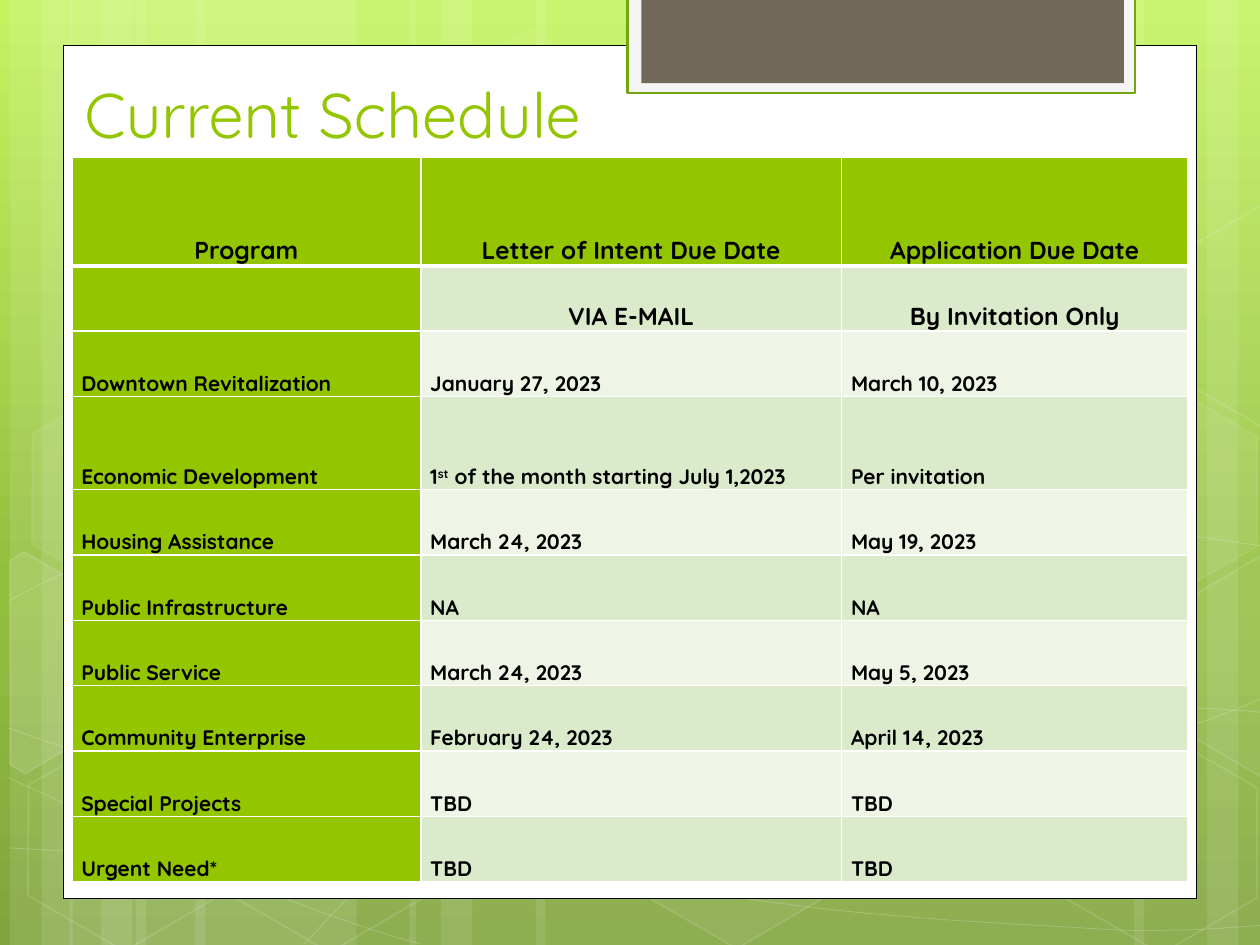
"""Build the Current Schedule slide: a table of program due dates on a green backdrop."""
import copy

import lxml.etree
import pptx
import pptx.dml.color
import pptx.enum.shapes
import pptx.enum.text
import pptx.oxml.ns
import pptx.util

Inches = pptx.util.Inches
Pt = pptx.util.Pt
qn = pptx.oxml.ns.qn
RECTANGLE = pptx.enum.shapes.MSO_SHAPE.RECTANGLE
HEXAGON = pptx.enum.shapes.MSO_SHAPE.HEXAGON
BOTTOM = pptx.enum.text.MSO_ANCHOR.BOTTOM


def paint(fill, color):
    fill.solid()
    fill.fore_color.rgb = pptx.dml.color.RGBColor.from_string(color)


def veil(shape, fill_alpha, line_alpha=0, line_width=0):
    shape.shadow.inherit = False
    shape.line.width = Pt(line_width)
    for fill, alpha in ((shape.fill, fill_alpha), (shape.line.fill, line_alpha)):
        if alpha:
            paint(fill, "FFFFFF")
        else:
            fill.background()
    alphas = [alpha for alpha in (fill_alpha, line_alpha) if alpha]
    for color, alpha in zip(list(shape.element.spPr.iter(qn("a:srgbClr"))), alphas):
        lxml.etree.SubElement(color, qn("a:alpha"), val=str(alpha * 1000))


deck = pptx.Presentation()
deck.slide_width, deck.slide_height = Inches(10), Inches(7.5)
slide = deck.slides.add_slide(deck.slide_layouts[5])
shapes = slide.shapes

backdrop = slide.background.fill
backdrop.gradient()
backdrop.gradient_angle = 270
stop_list = next(slide.element.iter(qn("a:gsLst")))
stop_list.append(copy.deepcopy(stop_list[-1]))
for stop, position, color in zip(backdrop.gradient_stops, (0, 0.62, 1), ("C3F35F", "93BF3F", "81A53E")):
    stop.position = position
    stop.color.rgb = pptx.dml.color.RGBColor.from_string(color)

stripes = [
    (1.08, 1.75), (0.08, 0.5), (0.33, 0.83),
    (1.55, 1.75), (0.55, 0.5), (0.8, 0.83),
    (7.33, 1.75), (9.58, 0.5), (9, 0.83),
    (4.25, 3.08), (3.25, 0.5), (3.5, 0.83),
]
for left, width in stripes:
    veil(shapes.add_shape(RECTANGLE, Inches(left), 0, Inches(width), deck.slide_height), 10)

waves = [
    [(0.07, 6.73), (0.61, 6.76), (1.15, 6.79), (1.9, 6.78), (2.65, 6.77), (3.58, 6.75), (4.58, 6.65),
     (5.58, 6.55), (7, 6.36), (7.92, 6.17), (8.83, 5.98), (9.77, 5.68), (10.07, 5.51)],
    [(0.07, 4.77), (0.36, 4.61), (0.65, 4.46), (1.21, 4.31), (1.78, 4.16), (2.59, 3.94), (3.47, 3.87),
     (4.36, 3.8), (5.44, 3.79), (6.54, 3.87), (7.64, 3.95), (9.47, 4.26), (10.07, 4.34)],
    [(0.06, 6.17), (1.27, 6.72), (2.47, 7.27), (3.34, 7.49)],
    [(0.07, 5.78), (0.38, 5.89), (0.7, 6), (1.28, 6.16), (1.86, 6.31), (2.73, 6.56), (3.57, 6.73),
     (4.4, 6.9), (5.45, 7.08), (6.28, 7.18), (7.11, 7.29), (8, 7.33), (8.53, 7.36),
     (9.05, 7.4), (9.19, 7.38), (9.45, 7.38), (9.71, 7.37), (9.89, 7.35), (10.07, 7.34)],
    [(2.42, 7.49), (2.6, 7.29), (2.78, 7.09), (3.02, 6.91), (3.26, 6.73), (3.6, 6.53), (3.88, 6.39),
     (4.16, 6.25), (4.33, 6.19), (4.7, 6.09), (5.06, 5.99), (5.73, 5.85), (6.08, 5.78),
     (6.44, 5.71), (6.49, 5.71), (6.8, 5.69), (7.11, 5.66), (7.6, 5.63), (7.94, 5.62),
     (8.29, 5.61), (8.86, 5.62), (8.86, 5.62), (8.86, 5.62), (9.53, 5.62), (9.53, 5.62),
     (9.71, 5.63), (9.88, 5.64), (9.97, 5.65), (10.06, 5.66), (10.03, 5.65), (10.06, 5.66)],
]
for wave in waves:
    points = [(Inches(x), Inches(y)) for x, y in wave]
    outline = shapes.build_freeform(*points[0])
    outline.add_line_segments(points[1:], close=False)
    curve = outline.convert_to_shape()
    track = next(curve.element.iter(qn("a:path")))
    segments = track.findall(qn("a:lnTo"))
    for first in range(0, len(segments), 3):
        bend = lxml.etree.SubElement(track, qn("a:cubicBezTo"))
        for segment in segments[first:first + 3]:
            bend.append(segment[0])
            track.remove(segment)
        if wave[first] == wave[first + 1] and wave[first + 2] == wave[first + 3]:
            straight = lxml.etree.SubElement(track, qn("a:lnTo"))
            straight.append(bend[-1])
            track.remove(bend)
    veil(curve, 0, 20, 0.5)

hexagons = [
    (3.34, 0.36, 4, 8), (4.97, 5.89, 6, 12), (0.11, 5.91, 0, 12),
    (0.14, 3.12, 7, 8), (1.74, 5.92, 0, 12), (7.53, 4.53, 10, 12),
    (8.34, 5.93, 0, 12), (8.34, 3.14, 7, 8),
]
for left, top, fill_alpha, line_alpha in hexagons:
    hexagon = shapes.add_shape(HEXAGON, Inches(left), Inches(top), Inches(1.75), Inches(1.52))
    hexagon.adjustments[0] = 0.285
    hexagon.adjustments[1] = 1.155
    hexagon.rotation = 30
    veil(hexagon, fill_alpha, line_alpha, 1)

cut_hexagons = [
    ([(0.08, 4.45), (0.19, 4.38), (0.96, 4.82), (0.95, 5.7), (0.2, 6.14), (0.08, 6.07)], 10),
    ([(9.26, 4.85), (10.01, 4.41), (10.09, 4.46), (10.09, 6.13), (10.02, 6.17), (9.26, 5.73)], 4),
    ([(9.26, 2.07), (10.01, 1.63), (10.1, 1.68), (10.09, 3.35), (10.02, 3.39), (9.26, 2.95)], 0),
]
for corners, fill_alpha in cut_hexagons:
    points = [(Inches(x), Inches(y)) for x, y in corners]
    outline = shapes.build_freeform(*points[0])
    outline.add_line_segments(points[1:], close=True)
    veil(outline.convert_to_shape(), fill_alpha, 12, 1)

panels = [
    (0.5, 0.36, 9, 6.77, "FFFFFF", "000000", 0.5),
    (4.98, -0.02, 4.03, 0.76, "F5F5F5", "74A510", 1.25),
    (5.09, -0.02, 3.83, 0.68, "71685A", None, 0),
]
for left, top, width, height, color, edge, edge_width in panels:
    panel = shapes.add_shape(RECTANGLE, Inches(left), Inches(top), Inches(width), Inches(height))
    panel.shadow.inherit = False
    paint(panel.fill, color)
    if edge:
        paint(panel.line.fill, edge)
        panel.line.width = Pt(edge_width)
    else:
        panel.line.fill.background()

title = shapes.title
shapes.element.append(title.element)
title.left, title.top, title.width, title.height = Inches(0.57), Inches(0.5), Inches(8.25), Inches(0.75)
title.text_frame.text = "Current Schedule"
title.text_frame.auto_size = pptx.enum.text.MSO_AUTO_SIZE.NONE
title.text_frame.vertical_anchor = BOTTOM
heading = title.text_frame.paragraphs[0]
heading.alignment = pptx.enum.text.PP_ALIGN.LEFT
heading.font.name = "Quicksand"
heading.font.size = Pt(36)
paint(heading.font.fill, "94C600")

schedule = [
    ("Program", "Letter of Intent Due Date", "Application Due Date"),
    ("", "VIA E-MAIL", "By Invitation Only"),
    ("Downtown Revitalization", "January 27, 2023", "March 10, 2023"),
    ("Economic Development", "1^st^ of the month starting July 1,2023", "Per invitation"),
    ("Housing Assistance", "March 24, 2023", "May 19, 2023"),
    ("Public Infrastructure", "NA", "NA"),
    ("Public Service", "March 24, 2023", "May 5, 2023"),
    ("Community Enterprise", "February 24, 2023", "April 14, 2023"),
    ("Special Projects", "TBD", "TBD"),
    ("Urgent Need*", "TBD", "TBD"),
]
table = shapes.add_table(len(schedule), 3, Inches(0.57), Inches(1.25), Inches(8.86), Inches(5.75)).table
table.first_row = table.horz_banding = False
for column, width in zip(table.columns, (2.77, 3.34, 2.75)):
    column.width = Inches(width)
tall_rows = {0: 0.86, 3: 0.74}
plain_height = (5.75 - sum(tall_rows.values())) / (len(schedule) - len(tall_rows))

for row, entries in enumerate(schedule):
    table.rows[row].height = Inches(tall_rows.get(row, plain_height))
    for col, entry in enumerate(entries):
        cell = table.cell(row, col)
        cell.vertical_anchor = BOTTOM
        cell.margin_left = cell.margin_right = Pt(5.4)
        cell.margin_top = cell.margin_bottom = 0
        for side in "LRTB":
            thick = (row, side) in ((0, "B"), (1, "T"))
            border = lxml.etree.SubElement(cell._tc.tcPr, qn("a:ln" + side), w=str(Pt(3 if thick else 1)))
            border_fill = lxml.etree.SubElement(border, qn("a:solidFill"))
            lxml.etree.SubElement(border_fill, qn("a:srgbClr"), val="FFFFFF")
        paint(cell.fill, "94C600" if row == 0 or col == 0 else ("EEF5E7", "DCEACC")[row % 2])
        line = cell.text_frame.paragraphs[0]
        if row < 2:
            line.alignment = pptx.enum.text.PP_ALIGN.CENTER
        line.font.name = "Quicksand"
        line.font.size = Pt(14 if row < 2 else 12)
        line.font.bold = True
        paint(line.font.fill, "000000")
        for part, words in enumerate(entry.split("^") if entry else []):
            run = line.add_run()
            run.text = words
            if part % 2:
                run._r.get_or_add_rPr().set("baseline", "30000")

deck.save("out.pptx")
